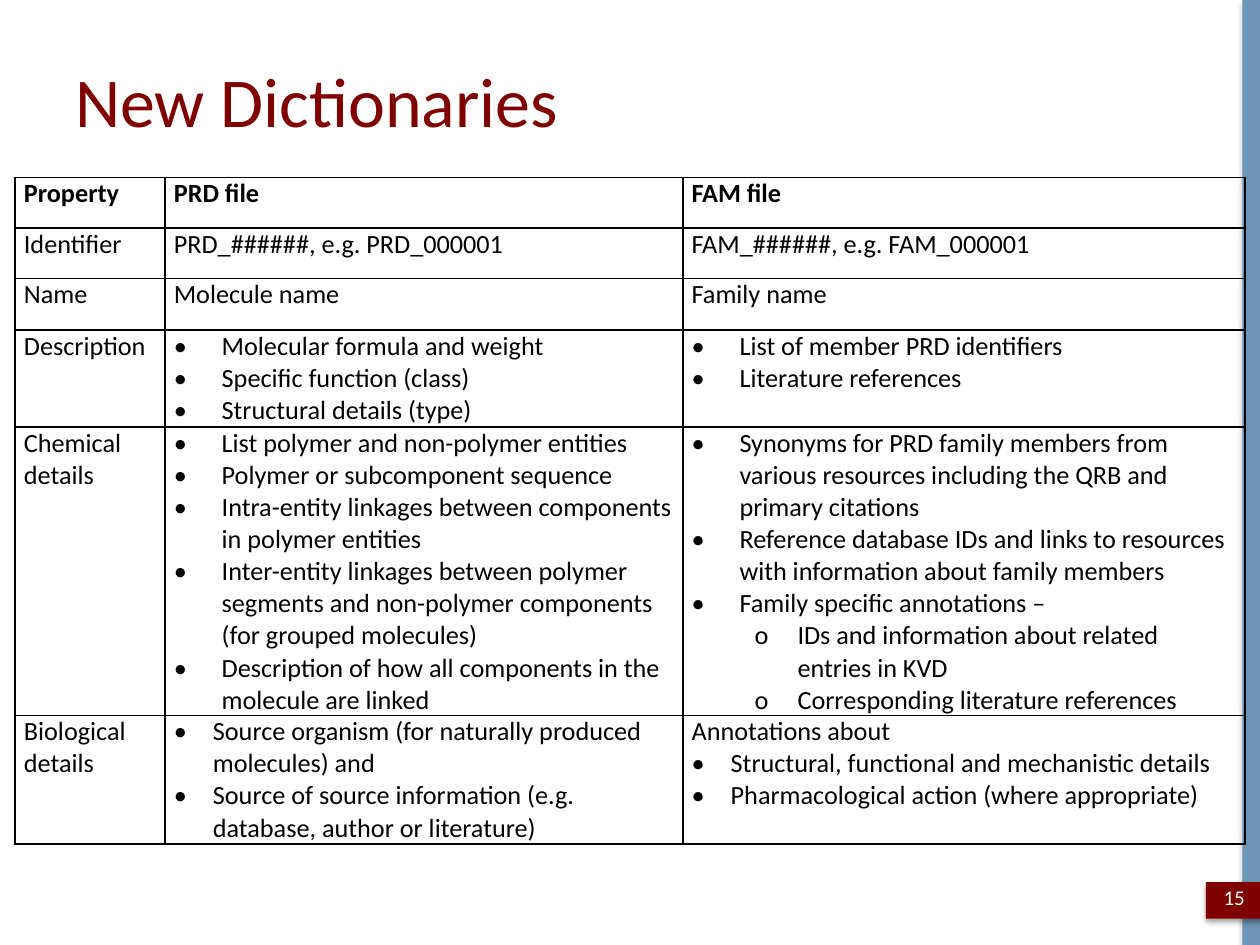
import pptx
import pptx.dml.color
import pptx.enum.shapes
import pptx.enum.text
import pptx.oxml.ns
import pptx.util
from lxml import etree

Inches = pptx.util.Inches
Pt = pptx.util.Pt
RGBColor = pptx.dml.color.RGBColor
qn = pptx.oxml.ns.qn

MAROON = RGBColor(0x80, 0x00, 0x00)
BLUE = RGBColor(0x6C, 0x95, 0xB6)
BLACK = RGBColor(0x00, 0x00, 0x00)
WHITE = RGBColor(0xFF, 0xFF, 0xFF)
FONT = "Calibri"
TABLE_SIZE = 15

# Paragraph styles: bullet character, left margin, hanging indent, level
STYLES = {
    "bullet": ("•", 0.38, 0.38, 0),
    "narrow": ("•", 0.31, 0.31, 0),
    "sub": ("o", 0.84, 0.34, 1),
}

COLUMN_WIDTHS = [1.19, 4.11, 4.46]
ROW_HEIGHTS = [0.4, 0.4, 0.41, 0.77, 2.29, 1.02]

# Each cell is a list of (style, text) paragraphs, or one plain string
ROWS = [
    ["Property", "PRD file", "FAM file"],
    ["Identifier", "PRD_######, e.g. PRD_000001", "FAM_######, e.g. FAM_000001"],
    ["Name", "Molecule name", "Family name"],
    ["Description",
     [("bullet", "Molecular formula and weight"),
      ("bullet", "Specific function (class)"),
      ("bullet", "Structural details (type)")],
     [("bullet", "List of member PRD identifiers"),
      ("bullet", "Literature references")]],
    ["Chemical details",
     [("bullet", "List polymer and non-polymer entities"),
      ("bullet", "Polymer or subcomponent sequence"),
      ("bullet", "Intra-entity linkages between components in polymer entities"),
      ("bullet", "Inter-entity linkages between polymer segments and "
                 "non-polymer components (for grouped molecules)"),
      ("bullet", "Description of how all components in the molecule are linked")],
     [("bullet", "Synonyms for PRD family members from various resources "
                 "including the QRB and primary citations"),
      ("bullet", "Reference database IDs and links to resources with "
                 "information about family members"),
      ("bullet", "Family specific annotations –"),
      ("sub", "IDs and information about related entries in KVD"),
      ("sub", "Corresponding literature references")]],
    ["Biological details",
     [("narrow", "Source organism (for naturally produced molecules) and"),
      ("narrow", "Source of source information (e.g. database, author or literature)")],
     [(None, "Annotations about"),
      ("narrow", "Structural, functional and mechanistic details"),
      ("narrow", "Pharmacological action (where appropriate)")]],
]


def format_runs(para, size, color, bold=False):
    for span in para.runs:
        span.font.name = FONT
        span.font.size = Pt(size)
        span.font.color.rgb = color
        span.font.bold = bold


def add_text(page, box, text, size, color, align):
    frame = page.shapes.add_textbox(*map(Inches, box)).text_frame
    frame.word_wrap = True
    frame.vertical_anchor = pptx.enum.text.MSO_ANCHOR.MIDDLE
    frame.text = text
    frame.paragraphs[0].alignment = align
    format_runs(frame.paragraphs[0], size, color)


def add_block(page, box, color):
    """Plain rectangle with a soft shadow below it."""
    block = page.shapes.add_shape(
        pptx.enum.shapes.MSO_SHAPE.RECTANGLE, *map(Inches, box))
    block.fill.solid()
    block.fill.fore_color.rgb = color
    block.line.fill.background()
    block.shadow.inherit = False
    effects = block.element.spPr.find(qn("a:effectLst"))
    shadow = etree.SubElement(
        effects, qn("a:outerShdw"), blurRad=str(Pt(3.1)), dist=str(Pt(1.8)),
        dir="5400000", rotWithShape="0")
    tint = etree.SubElement(shadow, qn("a:srgbClr"), val=str(BLACK))
    etree.SubElement(tint, qn("a:alpha"), val="35000")


def add_bullet(para, style):
    character, margin, hanging, level = STYLES[style]
    para.level = level
    properties = para._p.get_or_add_pPr()
    properties.set("marL", str(Inches(margin)))
    properties.set("indent", str(-Inches(hanging)))
    etree.SubElement(properties, qn("a:buFont"), typeface=FONT)
    etree.SubElement(properties, qn("a:buChar"), char=character)
    # The paragraph end sets the size of the bullet
    etree.SubElement(para._p, qn("a:endParaRPr"), sz=str(TABLE_SIZE * 100))


def add_borders(cell):
    properties = cell._tc.get_or_add_tcPr()
    for side in ("lnL", "lnR", "lnT", "lnB"):
        line = etree.SubElement(properties, qn(f"a:{side}"), w=str(Pt(1)))
        fill = etree.SubElement(line, qn("a:solidFill"))
        etree.SubElement(fill, qn("a:srgbClr"), val=str(BLACK))


def fill_cell(cell, content, bold):
    cell.margin_left = cell.margin_right = Inches(0.07)
    cell.margin_top = cell.margin_bottom = 0
    add_borders(cell)
    cell.fill.background()
    items = [(None, content)] if isinstance(content, str) else content
    cell.text_frame.text = "\n".join(text for _, text in items)
    for para, (style, _) in zip(cell.text_frame.paragraphs, items):
        if style:
            add_bullet(para, style)
        format_runs(para, TABLE_SIZE, BLACK, bold)


def add_dictionary_table(page, left, top):
    table = page.shapes.add_table(
        len(ROWS), len(COLUMN_WIDTHS), Inches(left), Inches(top),
        Inches(sum(COLUMN_WIDTHS)), Inches(sum(ROW_HEIGHTS))).table
    table.first_row = table.horz_banding = False
    for column, width in zip(table.columns, COLUMN_WIDTHS):
        column.width = Inches(width)
    for row_index, (row, height) in enumerate(zip(ROWS, ROW_HEIGHTS)):
        table.rows[row_index].height = Inches(height)
        for column_index, content in enumerate(row):
            fill_cell(table.cell(row_index, column_index), content, row_index == 0)


def main():
    deck = pptx.Presentation()
    deck.slide_width, deck.slide_height = Inches(10), Inches(7.5)
    page = deck.slides.add_slide(deck.slide_layouts[6])
    align = pptx.enum.text.PP_ALIGN

    # Side bar and page number block
    add_block(page, (9.86, 0, 0.14, 7.5), BLUE)
    add_block(page, (9.57, 7, 0.48, 0.29), MAROON)

    # Title, table and page number
    add_text(page, (0.5, 0.3, 9, 0.98), "New Dictionaries", 40, MAROON, align.LEFT)
    add_dictionary_table(page, 0.12, 1.41)
    add_text(page, (9.57, 6.92, 0.45, 0.4), "15", 12, WHITE, align.CENTER)

    deck.save("out.pptx")


if __name__ == "__main__":
    main()
